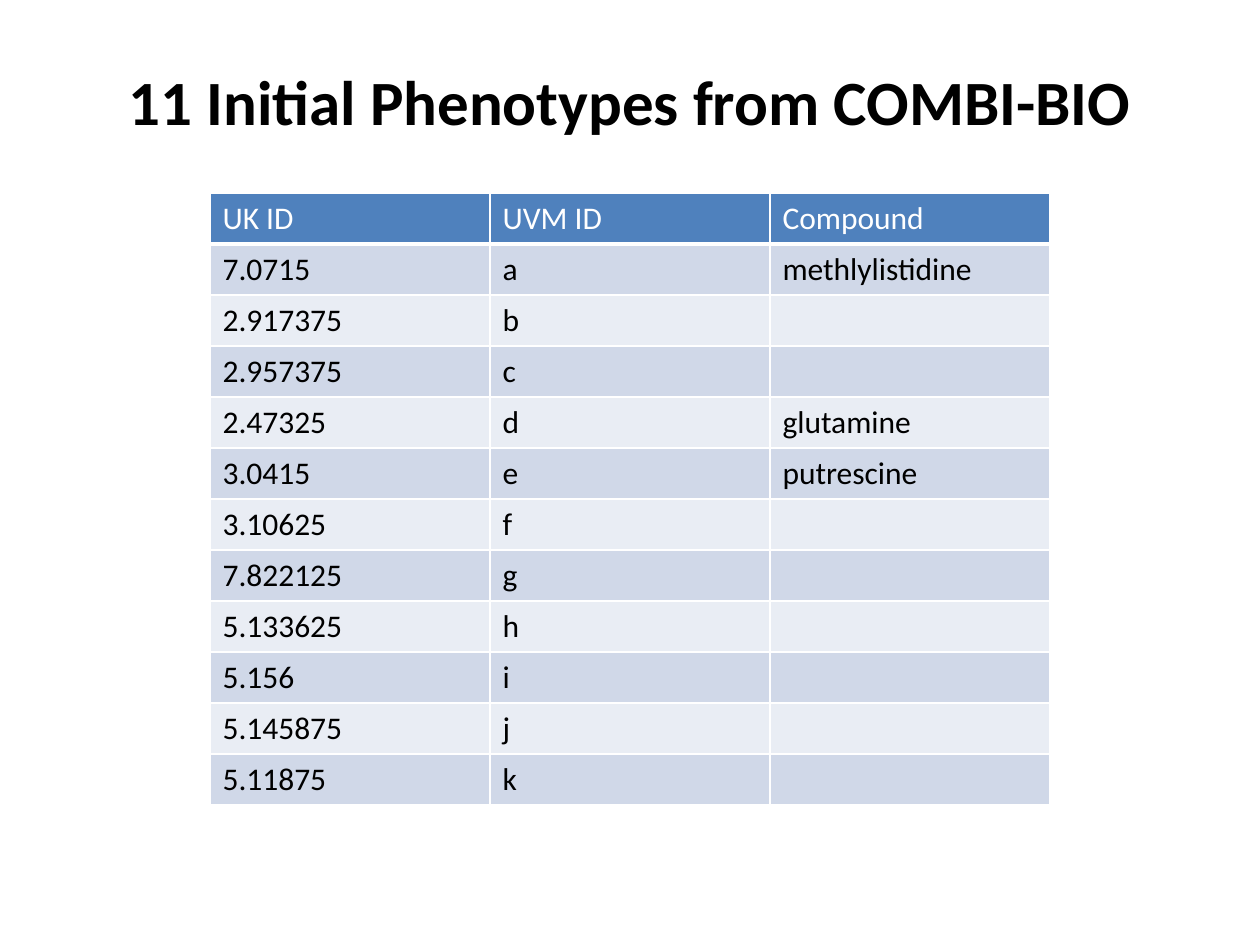
from dataclasses import dataclass

from lxml import etree
from pptx import Presentation
from pptx.dml.color import RGBColor
from pptx.enum.text import MSO_ANCHOR, PP_ALIGN
from pptx.oxml.ns import qn
from pptx.util import Pt

CENTER = PP_ALIGN.CENTER
MIDDLE = MSO_ANCHOR.MIDDLE
SCALE = 914400 / 126


@dataclass(frozen=True)
class Theme:
    font: str = "Calibri"
    ink: str = "000000"
    paper: str = "FFFFFF"
    head: str = "4F81BD"
    odd: str = "D0D8E8"
    even: str = "E9EDF4"
    title: int = 36
    body: int = 18
    thin: int = 1
    thick: int = 3


THEME = Theme()
HEADS = ("UK ID", "UVM ID", "Compound")
IDS = ("7.0715", "2.917375", "2.957375", "2.47325", "3.0415", "3.10625",
       "7.822125", "5.133625", "5.156", "5.145875", "5.11875")
NAMES = {"a": "methlylistidine", "d": "glutamine", "e": "putrescine"}


def px(size):
    return round(size * SCALE)


def style(para, size, color, bold=False):
    for run in para.runs:
        run.font.name = THEME.font
        run.font.size = Pt(size)
        run.font.bold = bold
        run.font.color.rgb = RGBColor.from_string(color)


def border(cell, base):
    props = cell._tc.get_or_add_tcPr()
    widths = (("L", THEME.thin), ("R", THEME.thin), ("T", THEME.thin), ("B", base))
    for spot, (side, width) in enumerate(widths):
        line = etree.Element(qn("a:ln" + side), w=str(Pt(width)))
        fill = etree.SubElement(line, qn("a:solidFill"))
        etree.SubElement(fill, qn("a:srgbClr"), val=THEME.paper)
        props.insert(spot, line)


def add_title(slide, box, text):
    frame = slide.shapes.add_textbox(*map(px, box)).text_frame
    frame.word_wrap = True
    frame.vertical_anchor = MIDDLE
    frame.text = text
    para = frame.paragraphs[0]
    para.alignment = CENTER
    style(para, THEME.title, THEME.ink, bold=True)


def add_grid(slide, box, rows):
    table = slide.shapes.add_table(len(rows), len(rows[0]), *map(px, box)).table
    for col in table.columns:
        col.width = px(box[2] // len(rows[0]))
    for row in table.rows:
        row.height = px(box[3] // len(rows))
    for r, row in enumerate(rows):
        top = r == 0
        shade = THEME.head if top else (THEME.even, THEME.odd)[r % 2]
        for c, text in enumerate(row):
            cell = table.cell(r, c)
            cell.text = text
            cell.fill.solid()
            cell.fill.fore_color.rgb = RGBColor.from_string(shade)
            border(cell, THEME.thick if top else THEME.thin)
            style(cell.text_frame.paragraphs[0], THEME.body,
                  THEME.paper if top else THEME.ink)


def main():
    deck = Presentation()
    deck.slide_width, deck.slide_height = px(1260), px(945)
    slide = deck.slides.add_slide(deck.slide_layouts[6])
    add_title(slide, (63, 21, 1134, 158), "11 Initial Phenotypes from COMBI-BIO")
    body = [(code, key, NAMES.get(key, "")) for code, key in zip(IDS, "abcdefghijk")]
    add_grid(slide, (210, 193, 840, 612), [HEADS, *body])
    deck.save("out.pptx")


if __name__ == "__main__":
    main()
